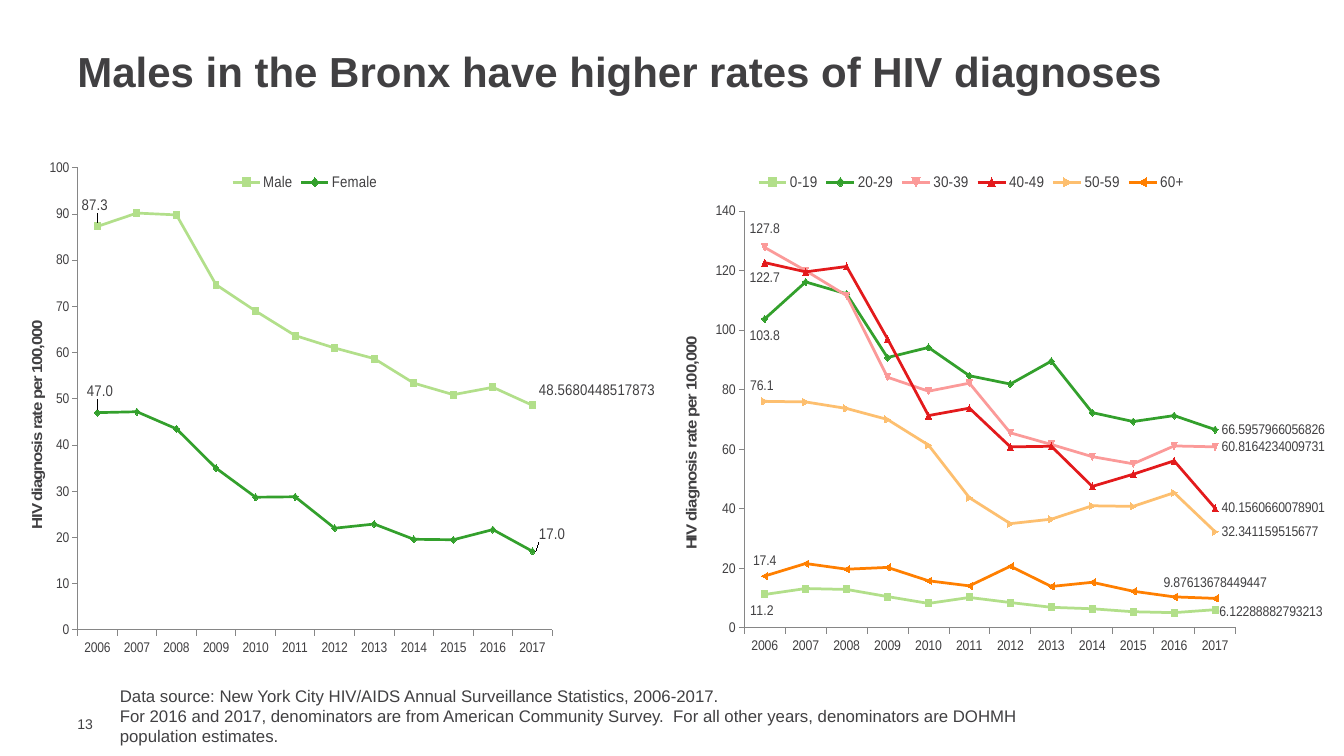
from lxml import etree
from pptx import Presentation
from pptx.chart.data import CategoryChartData
from pptx.dml.color import RGBColor
from pptx.enum.chart import XL_CHART_TYPE, XL_LABEL_POSITION, XL_LEGEND_POSITION, XL_TICK_MARK
from pptx.enum.text import MSO_ANCHOR
from pptx.oxml.ns import qn
from pptx.util import Inches, Pt

ABOVE = XL_LABEL_POSITION.ABOVE
BELOW = XL_LABEL_POSITION.BELOW
RIGHT = XL_LABEL_POSITION.RIGHT
TOP = XL_LEGEND_POSITION.TOP
OUTSIDE = XL_TICK_MARK.OUTSIDE
LINE_MARKERS = XL_CHART_TYPE.LINE_MARKERS
MIDDLE = MSO_ANCHOR.MIDDLE

FONT = "Arial"
INK = "414042"
AXIS_GRAY = "868686"
AXIS_TITLE = "HIV diagnosis rate per 100,000"
YEARS = [str(year) for year in range(2006, 2018)]
TITLE = "Males in the Bronx have higher rates of HIV diagnoses"
SOURCES = [
    "Data source: New York City HIV/AIDS Annual Surveillance Statistics, 2006-2017.",
    "For 2016 and 2017, denominators are from American Community Survey.  For all other years, "
    "denominators are DOHMH population estimates.",
]

SEX_SERIES = [
    ("Male", "B2DF8A",
     [87.3, 90.2, 89.8, 74.7, 69, 63.7, 61, 58.7, 53.4, 50.9, 52.5, 48.6],
     (ABOVE, -0.005, -0.01, None), (RIGHT, 0, -0.03, "48.5680448517873")),
    ("Female", "33A02C",
     [47, 47.2, 43.5, 35, 28.7, 28.8, 22, 22.9, 19.6, 19.5, 21.7, 17],
     (ABOVE, 0.005, -0.012, None), (RIGHT, 0, -0.035, None)),
]
AGE_SERIES = [
    ("0-19", "B2DF8A",
     [11.2, 13.2, 12.9, 10.5, 8.2, 10.2, 8.5, 6.9, 6.4, 5.4, 5.1, 6.1],
     (BELOW, -0.005, 0.002, None), (RIGHT, -0.004, 0.005, "6.12288882793213")),
    ("20-29", "33A02C",
     [103.8, 116.2, 112.2, 90.8, 94.2, 84.7, 81.9, 89.6, 72.3, 69.3, 71.3, 66.6],
     (BELOW, 0, 0.004, None), (RIGHT, 0, 0, "66.5957966056826")),
    ("30-39", "FB9A99",
     [127.8, 120, 111.6, 84.2, 79.5, 82.2, 65.5, 61.6, 57.5, 55.1, 61.1, 60.8],
     (ABOVE, 0, -0.006, None), (RIGHT, 0, 0, "60.8164234009731")),
    ("40-49", "E31A1C",
     [122.7, 119.6, 121.4, 97.1, 71.3, 73.8, 60.8, 61, 47.5, 51.6, 56.1, 40.2],
     (BELOW, 0, 0, None), (RIGHT, 0, 0, "40.1560660078901")),
    ("50-59", "FDBF6F",
     [76.1, 75.9, 73.7, 70, 61.4, 43.7, 35, 36.5, 41, 40.8, 45.4, 32.3],
     (ABOVE, -0.005, 0, None), (RIGHT, 0, 0, "32.341159515677")),
    ("60+", "FF7F00",
     [17.4, 21.6, 19.7, 20.3, 15.8, 14.1, 20.7, 13.9, 15.3, 12.3, 10.4, 9.9],
     (ABOVE, 0, 0, None), (ABOVE, 0, 0, "9.87613678449447")),
]
CHARTS = [
    dict(box=(0.25, 1.58, 6.25, 5), series=SEX_SERIES, top=100, step=10, label_size=11,
         plot=(0.097, 0.017, 0.879, 0.917), legend=(0.376, 0.02)),
    dict(box=(6.58, 1.58, 6.58, 5), series=AGE_SERIES, top=140, step=20, label_size=10,
         plot=(0.139, 0.103, 0.845, 0.827), legend=(0.156, 0.02)),
]


def color(value):
    return RGBColor.from_string(value)


def set_font(font, size, bold=False):
    font.name, font.size, font.bold = FONT, Pt(size), bold
    font.color.rgb = color(INK)


def add_text(slide, box, lines, size, bold=False, spacing=None, anchor=None, insets=None):
    frame = slide.shapes.add_textbox(*map(Inches, box)).text_frame
    frame.word_wrap = True
    if anchor is not None:
        frame.vertical_anchor = anchor
    if insets:
        (frame.margin_left, frame.margin_top,
         frame.margin_right, frame.margin_bottom) = map(Inches, insets)
    frame.text = "\n".join(lines)
    for paragraph in frame.paragraphs:
        set_font(paragraph.font, size, bold)
        if spacing:
            paragraph.line_spacing = spacing


def make_layout(entries):
    layout = etree.Element(qn("c:layout"))
    manual = etree.SubElement(layout, qn("c:manualLayout"))
    for tag, value in entries:
        etree.SubElement(manual, qn("c:" + tag), val=str(value))
    return layout


def place(element, entries, index):
    for old in element.findall(qn("c:layout")):
        element.remove(old)
    element.insert(index, make_layout(entries))


def label_point(series, index, label, size):
    position, shift_x, shift_y, text = label
    data_label = series.points[index].data_label
    if text:
        frame = data_label.text_frame
        frame.text = text
        frame.word_wrap = False
        paragraph = frame.paragraphs[0]
        set_font(paragraph.font, size)
        set_font(paragraph.runs[0].font, size)
    else:
        set_font(data_label.font, size)
    data_label.position = position
    element = series._element.xpath(f'.//c:dLbl[c:idx/@val="{index}"]')[0]
    if not text:
        element.insert(1, etree.Element(qn("c:numFmt"), formatCode="0.0", sourceLinked="0"))
    if shift_x or shift_y:
        place(element, [("x", shift_x), ("y", shift_y)], 1)


def style_axis(axis):
    axis.has_major_gridlines = False
    axis.major_tick_mark = OUTSIDE
    axis.format.line.color.rgb = color(AXIS_GRAY)
    axis.format.line.width = Pt(0.75)
    set_font(axis.tick_labels.font, 10)


def add_rate_chart(slide, box, series, top, step, label_size, plot, legend):
    data = CategoryChartData()
    data.categories = YEARS
    for name, _, values, _, _ in series:
        data.add_series(name, values)
    chart = slide.shapes.add_chart(LINE_MARKERS, *map(Inches, box), data).chart
    set_font(chart.font, 10)
    chart.has_title = False
    chart.has_legend = True
    chart.legend.position = TOP
    chart.legend.include_in_layout = False
    set_font(chart.legend.font, 11)
    place(chart.legend._element,
          [("xMode", "edge"), ("yMode", "edge"), *zip("xy", legend)], 1)
    plot_area = chart._chartSpace.chart.plotArea
    place(plot_area, [("layoutTarget", "inner"), ("xMode", "edge"), ("yMode", "edge"),
                      *zip("xywh", plot)], 0)

    style_axis(chart.category_axis)
    value_axis = chart.value_axis
    style_axis(value_axis)
    value_axis.minimum_scale, value_axis.maximum_scale = 0, top
    value_axis.major_unit = step
    value_axis.tick_labels.number_format = "0"
    value_axis.tick_labels.number_format_is_linked = False
    title = value_axis.axis_title.text_frame
    title.text = AXIS_TITLE
    set_font(title.paragraphs[0].font, 12, True)

    chart.plots[0].vary_by_categories = False
    for line, (_, shade, _, first, last) in zip(chart.plots[0].series, series):
        line.smooth = False
        line.format.line.color.rgb = color(shade)
        line.format.line.width = Pt(2.25)
        line.marker.size = 5
        line.marker.format.fill.solid()
        line.marker.format.fill.fore_color.rgb = color(shade)
        line.marker.format.line.color.rgb = color(shade)
        line.data_labels.show_value = False
        label_point(line, 0, first, label_size)
        label_point(line, len(YEARS) - 1, last, label_size)


def main():
    presentation = Presentation()
    presentation.slide_width, presentation.slide_height = Inches(13.33), Inches(7.5)
    slide = presentation.slides.add_slide(presentation.slide_layouts[6])
    add_text(slide, (0.67, 7.1, 0.43, 0.17), ["13"], 10, anchor=MIDDLE, insets=(0.1, 0, 0, 0))
    add_text(slide, (0.67, 0.5, 12, 0.5), [TITLE], 30, bold=True, spacing=0.8, anchor=MIDDLE)
    for chart in CHARTS:
        add_rate_chart(slide, **chart)
    add_text(slide, (1.09, 6.75, 9.25, 0.71), SOURCES, 12)
    presentation.save("out.pptx")


if __name__ == "__main__":
    main()
